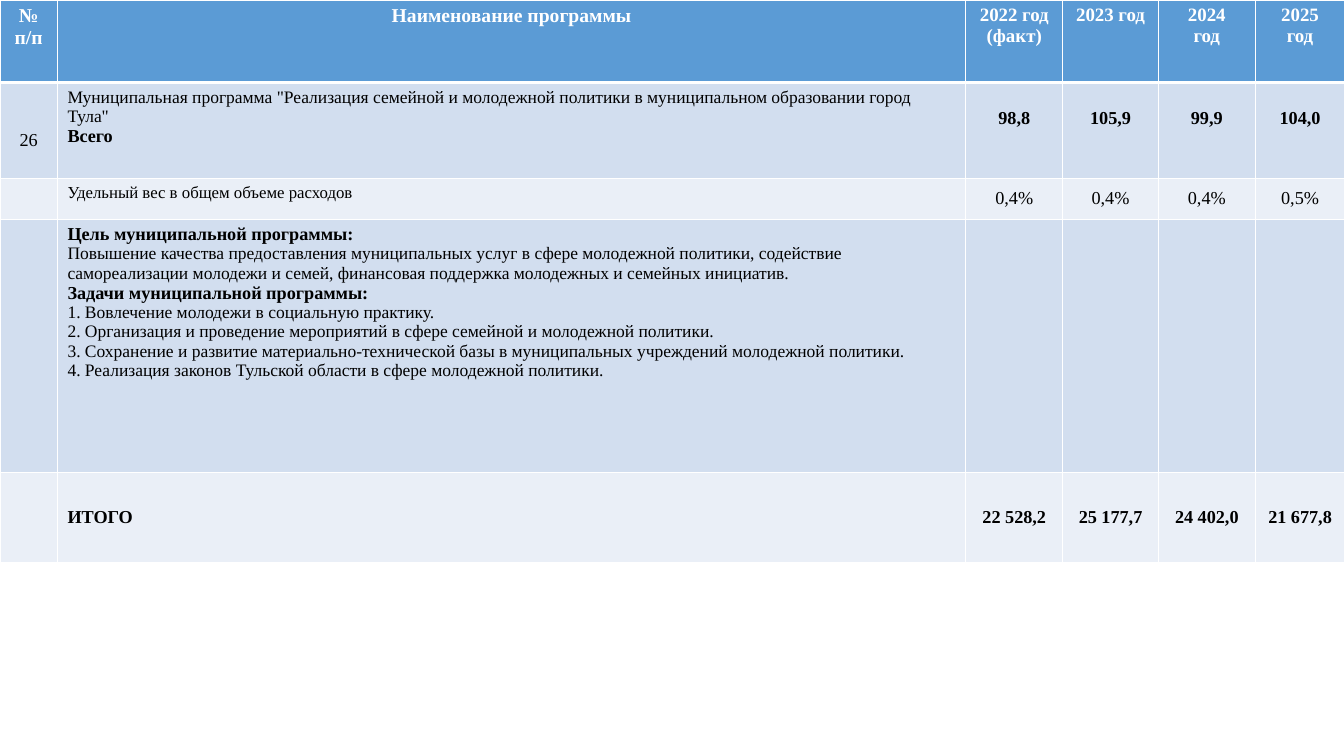
"""Builds the slide with the municipal programme spending table."""
import pptx
import pptx.dml.color
import pptx.enum.text
import pptx.oxml
import pptx.oxml.ns
import pptx.util

Inches = pptx.util.Inches
Pt = pptx.util.Pt
Align = pptx.enum.text.PP_ALIGN
Anchor = pptx.enum.text.MSO_ANCHOR

FONT = "Times New Roman"
WHITE, BLACK = "FFFFFF", "000000"
HEADER_FILL, DARK_BAND, LIGHT_BAND = "5B9BD5", "D2DEEF", "EAEFF7"
COLUMN_WIDTHS = [0.57, 9.01, 0.96, 0.95, 0.96, 0.89]
ROW_HEIGHTS = [0.82, 0.95, 0.4, 2.51, 0.9]
NAME_COLUMN = 1
CELL_MARGIN, LINE_HEIGHT = 0.05, 0.21


def bold(text, size=13):
    return text, {"size": Pt(size), "bold": True}


def plain(text, size=12.5):
    return text, {"size": Pt(size), "bold": False}


HEADINGS = [
    [bold("№ п/п", 14)],
    [bold("Наименование программы", 14)],
    [bold("2022 год (факт)", 13.5)],
    [bold("2023 год", 13.5)],
    [bold("2024", 13.5), bold("год", 13.5)],
    [bold("2025", 13.5), bold("год", 13.5)],
]
PROGRAMME = [
    plain('Муниципальная программа "Реализация семейной и молодежной политики '
          'в муниципальном образовании город Тула"'),
    bold("Всего"),
]
AIMS = [
    bold("Цель муниципальной программы:"),
    plain("Повышение качества предоставления муниципальных услуг в сфере молодежной "
          "политики, содействие самореализации молодежи и семей, финансовая поддержка "
          "молодежных и семейных инициатив."),
    bold("Задачи муниципальной программы:"),
    plain("1. Вовлечение молодежи в социальную практику."),
    plain("2. Организация и проведение мероприятий в сфере семейной и молодежной политики."),
    plain("3. Сохранение и развитие материально-технической базы в муниципальных "
          "учреждений молодежной политики."),
    plain("4. Реализация законов Тульской области в сфере молодежной политики."),
]
SPENDING = ["98,8", "105,9", "99,9", "104,0"]
SHARES = ["0,4%", "0,4%", "0,4%", "0,5%"]
TOTALS = ["22 528,2", "25 177,7", "24 402,0", "21 677,8"]

ROWS = [
    HEADINGS,
    [[plain("26", 13)], PROGRAMME] + [[bold(amount)] for amount in SPENDING],
    [[], [plain("Удельный вес в общем объеме расходов", 12)]]
    + [[plain(share, 13)] for share in SHARES],
    [[], AIMS, [], [], [], []],
    [[], [bold("ИТОГО")]] + [[bold(total)] for total in TOTALS],
]
LINES_ABOVE = {(1, 0): 2, (1, 2): 1, (1, 3): 1, (1, 4): 1, (1, 5): 1}
MIDDLE_CELLS = {(2, column) for column in range(2, 6)} | {(4, column) for column in range(1, 6)}


def colour(value):
    return pptx.dml.color.RGBColor.from_string(value)


def add_borders(cell, bottom_width):
    properties = cell._tc.get_or_add_tcPr()
    widths = {"lnL": 1, "lnR": 1, "lnT": 1, "lnB": bottom_width}
    for index, (side, width) in enumerate(widths.items()):
        properties.insert(index, pptx.oxml.parse_xml(
            f'<a:{side} {pptx.oxml.ns.nsdecls("a")} w="{Pt(width)}"><a:solidFill>'
            f'<a:srgbClr val="{WHITE}"/></a:solidFill></a:{side}>'))


def write_lines(cell, lines, align, text_colour):
    frame = cell.text_frame
    for index, (text, formats) in enumerate(lines):
        paragraph = frame.add_paragraph() if index else frame.paragraphs[0]
        paragraph.alignment = align
        run = paragraph.add_run()
        run.text = text
        for attribute, value in {"name": FONT, **formats}.items():
            setattr(run.font, attribute, value)
        run.font.color.rgb = colour(text_colour)


def build_table(slide):
    table = slide.shapes.add_table(
        len(ROWS), len(COLUMN_WIDTHS), 0, 0,
        Inches(sum(COLUMN_WIDTHS)), Inches(sum(ROW_HEIGHTS))).table
    for column, width in zip(table.columns, COLUMN_WIDTHS):
        column.width = Inches(width)
    for row, height in zip(table.rows, ROW_HEIGHTS):
        row.height = Inches(height)
    for r, row in enumerate(ROWS):
        header = r == 0
        fill = HEADER_FILL if header else DARK_BAND if r % 2 else LIGHT_BAND
        for c, lines in enumerate(row):
            cell = table.cell(r, c)
            cell.fill.solid()
            cell.fill.fore_color.rgb = colour(fill)
            cell.margin_top = Inches(CELL_MARGIN + LINE_HEIGHT * LINES_ABOVE.get((r, c), 0))
            cell.vertical_anchor = Anchor.MIDDLE if (r, c) in MIDDLE_CELLS else Anchor.TOP
            add_borders(cell, 3 if header else 1)
            align = Align.LEFT if c == NAME_COLUMN and not header else Align.CENTER
            write_lines(cell, lines, align, WHITE if header else BLACK)


def main():
    deck = pptx.Presentation()
    deck.slide_width, deck.slide_height = Inches(13.33), Inches(7.5)
    build_table(deck.slides.add_slide(deck.slide_layouts[6]))
    deck.save("out.pptx")


if __name__ == "__main__":
    main()
